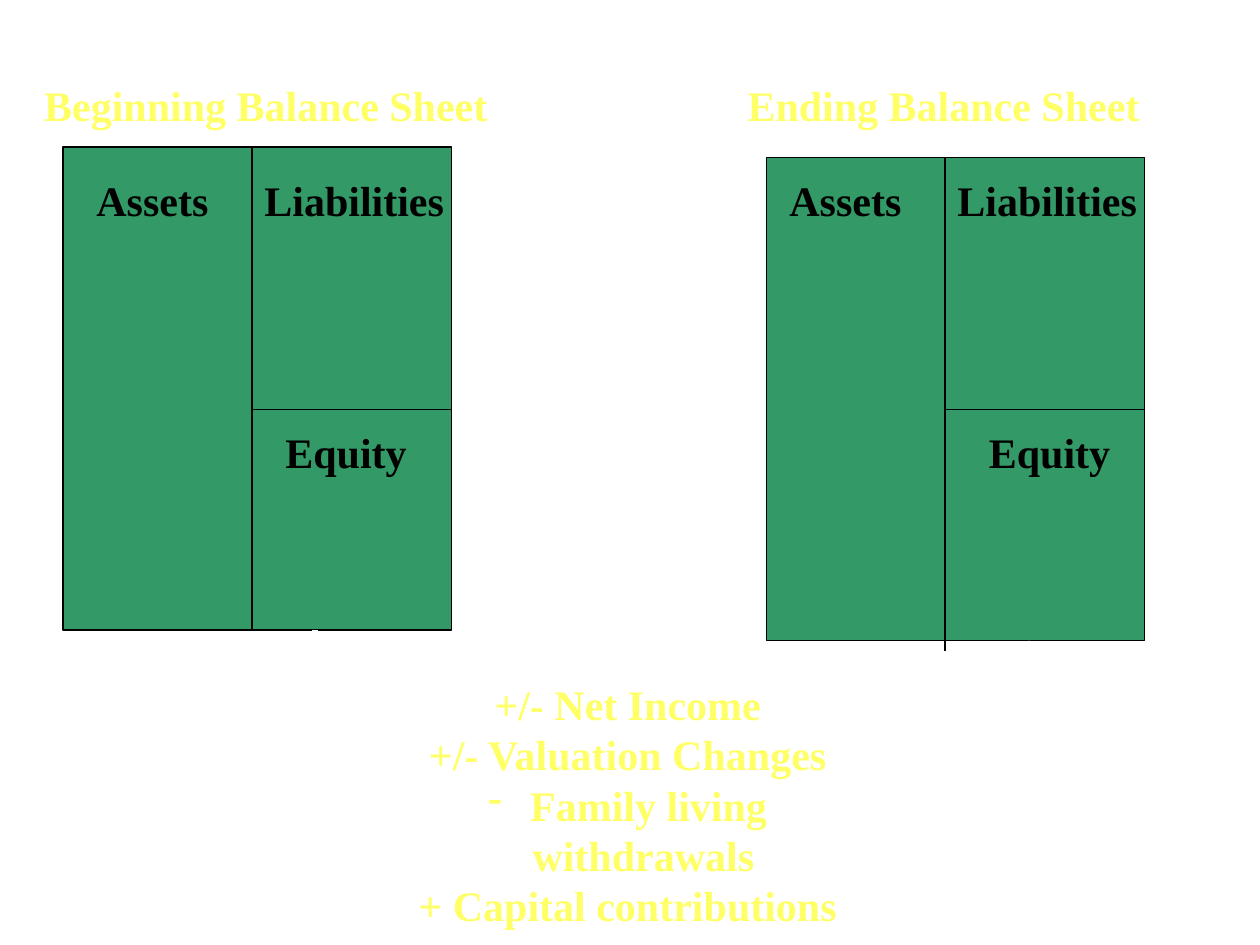
from pptx import Presentation, util as u
from pptx.dml.color import RGBColor
from pptx.enum import shapes, text
from pptx.oxml.ns import qn
from lxml import etree

presentation = Presentation()
presentation.slide_width, presentation.slide_height = u.Inches(10), u.Inches(7.5)
slide = presentation.slides.add_slide(presentation.slide_layouts[6])

# Grid of 120 columns by 90 rows; a cell is square
CELL = presentation.slide_width / 120
BLACK, WHITE, GREEN, YELLOW = "000000", "FFFFFF", "339966", "FFFF66"
color = RGBColor.from_string


def add_line(start, end, line_color=BLACK, width=0.75, arrow=False):
    points = [round(value * CELL) for value in (*start, *end)]
    connector = slide.shapes.add_connector(shapes.MSO_CONNECTOR.STRAIGHT, *points)
    connector.line.color.rgb = color(line_color)
    connector.line.width = u.Pt(width)
    if arrow:
        etree.SubElement(connector.line._get_or_add_ln(), qn("a:tailEnd"), type="triangle")
    etree.SubElement(connector._element.spPr, qn("a:effectLst"))


def add_text(box, lines, font_color, wrap=False, align=text.PP_ALIGN.LEFT):
    shape = slide.shapes.add_textbox(*[round(value * CELL) for value in box])
    frame = shape.text_frame
    frame.word_wrap = wrap
    frame.auto_size = text.MSO_AUTO_SIZE.SHAPE_TO_FIT_TEXT
    frame.text = "\n".join(lines)
    font_format = {"name": "Times New Roman", "size": u.Pt(24), "bold": True}
    for paragraph in frame.paragraphs:
        paragraph.alignment = align
        for run in paragraph.runs:
            for name, value in font_format.items():
                setattr(run.font, name, value)
            run.font.color.rgb = color(font_color)
    return shape


# Balance sheets: left, top, width, height, divider column, divider end,
# left of the Assets and Equity labels, then title, title left and title width
sheets = [
    (6, 14, 37, 46, 24, 60, 8, 26, "Beginning Balance Sheet", 3, 44.64),
    (73, 15, 36, 46, 90, 62, 74, 93, "Ending Balance Sheet", 70, 39.72),
]
for (left, top, width, height, middle, bottom, assets_left, equity_left,
     title, title_left, title_width) in sheets:
    sheet = slide.shapes.add_shape(
        shapes.MSO_SHAPE.RECTANGLE,
        *[round(value * CELL) for value in (left, top, width, height)])
    sheet.shadow.inherit = False
    sheet.fill.solid()
    sheet.fill.fore_color.rgb = color(GREEN)
    sheet.line.color.rgb = color(BLACK)
    sheet.line.width = u.Pt(0.75)

    add_line((middle, top), (middle, bottom))
    add_line((middle, 39), (left + width, 39))

    add_text((assets_left, 16, 15, 6), ["Assets"], BLACK, wrap=True)
    add_text((middle, 16, 19.8, 6), ["Liabilities"], BLACK)
    add_text((equity_left, 40, 14, 6), ["Equity"], BLACK)
    add_text((title_left, 7, title_width, 6), [title], YELLOW,
             align=text.PP_ALIGN.CENTER)

# Changes between the two sheets
changes = add_text(
    (35, 64, 49.56, 20.52),
    ["+/- Net Income", "+/- Valuation Changes",
     " Family living withdrawals", "+ Capital contributions"],
    YELLOW, wrap=True, align=text.PP_ALIGN.CENTER)
changes.line.color.rgb = color(WHITE)
changes.line.width = u.Pt(0.75)

# Dash bullet with a hanging indent on the withdrawals
properties = changes.text_frame.paragraphs[2]._p.get_or_add_pPr()
properties.set("marL", str(u.Inches(0.25)))
properties.set("indent", str(-u.Inches(0.25)))
etree.SubElement(properties, qn("a:buChar"), char="-")

# Flow from the beginning sheet through the changes to the ending sheet
for start, end, arrow in [
    ((30, 60), (30, 70), False),
    ((30, 70), (35, 70), True),
    ((85, 70), (98, 70), False),
    ((98, 70), (98, 61), True),
]:
    add_line(start, end, WHITE, 3, arrow)

presentation.save("out.pptx")
